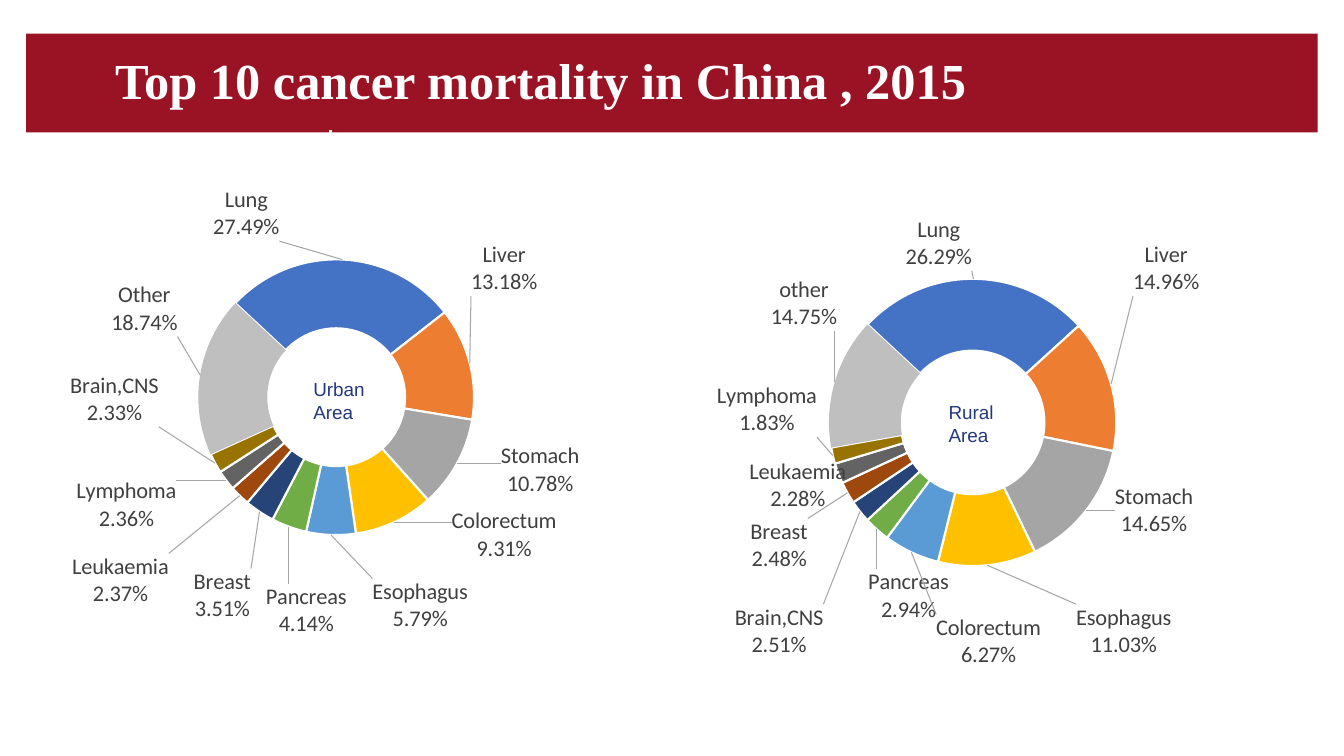
from dataclasses import dataclass
from itertools import accumulate
from math import cos, radians, sin

from lxml.etree import SubElement
from pptx import Presentation
from pptx.chart.data import CategoryChartData
from pptx.dml.color import RGBColor
from pptx.enum.chart import XL_CHART_TYPE
from pptx.enum.shapes import MSO_CONNECTOR, MSO_SHAPE
from pptx.enum.text import MSO_ANCHOR, MSO_AUTO_SIZE, PP_ALIGN
from pptx.oxml import parse_xml
from pptx.oxml.ns import nsdecls, qn
from pptx.util import Inches, Pt


@dataclass(frozen=True)
class Theme:
    """Colours, fonts and type sizes of the slide."""
    banner: str = "991324"
    white: str = "FFFFFF"
    area: str = "23387D"
    label: str = "404040"
    leader: str = "A6A6A6"
    slices: tuple = ("4472C4", "ED7D31", "A5A5A5", "FFC000", "5B9BD5", "70AD47",
                     "264478", "9E480E", "636363", "997300", "BFBFBF")
    title_font: str = "Times New Roman"
    area_font: str = "Arial"
    chart_font: str = "Calibri"
    title_size: float = 36
    area_size: float = 13.5
    label_size: float = 16
    chart_size: float = 10


def format_font(font, name, size, color, bold=False):
    """Set the face, size, colour and weight of a font."""
    font.name, font.size, font.bold = name, Pt(size), bold
    font.color.rgb = RGBColor.from_string(color)


def write_text(shape, text, anchor=MSO_ANCHOR.TOP, wrap=True, **font_format):
    """Fill a shape with left-aligned text, one paragraph a line."""
    frame = shape.text_frame
    frame.text = text
    frame.word_wrap, frame.vertical_anchor = wrap, anchor
    frame.auto_size = MSO_AUTO_SIZE.NONE
    for paragraph in frame.paragraphs:
        paragraph.alignment = PP_ALIGN.LEFT
        format_font(paragraph.font, **font_format)


def manual_layout(**values):
    """Return a chart layout element with the given settings."""
    settings = "".join(f'<c:{key} val="{value}"/>' for key, value in values.items())
    return parse_xml(f'<c:layout {nsdecls("c")}><c:manualLayout>{settings}'
                     '</c:manualLayout></c:layout>')


class SlideBuilder:
    """Draws elements on one slide with a grid of 128 columns and 72 rows."""

    def __init__(self, presentation, theme):
        """Add a title-only slide."""
        self.theme = theme
        self.column = presentation.slide_width / 128
        self.row = presentation.slide_height / 72
        self.slide = presentation.slides.add_slide(presentation.slide_layouts[5])

    def cells(self, left, top, width, height):
        """Turn grid cells into slide lengths."""
        return (round(left * self.column), round(top * self.row),
                round(width * self.column), round(height * self.row))

    def banner(self, *area):
        """Draw the title band."""
        shape = self.slide.shapes.add_shape(MSO_SHAPE.RECTANGLE, *self.cells(*area))
        shape.shadow.inherit = False
        shape.fill.solid()
        shape.fill.fore_color.rgb = RGBColor.from_string(self.theme.banner)
        shape.line.fill.background()

    def title(self, text, *area):
        """Place the title placeholder in front of the band."""
        title = self.slide.shapes.title
        title.left, title.top, title.width, title.height = self.cells(*area)
        write_text(title, text, anchor=MSO_ANCHOR.MIDDLE, name=self.theme.title_font,
                   size=self.theme.title_size, color=self.theme.white, bold=True)
        title.element.getparent().append(title.element)

    def tick(self, *ends):
        """Draw a white hairline."""
        line = self.slide.shapes.add_connector(MSO_CONNECTOR.STRAIGHT, *self.cells(*ends))
        line.line.color.rgb = RGBColor.from_string(self.theme.white)
        line.line.width = Pt(0)
        SubElement(line.element.spPr, qn("a:effectLst"))

    def area_label(self, text, *area, wrap=True):
        """Write the name in the hole of a ring."""
        box = self.slide.shapes.add_textbox(*self.cells(*area))
        write_text(box, text, wrap=wrap, name=self.theme.area_font,
                   size=self.theme.area_size, color=self.theme.area)

    def doughnut(self, slices, plot, *area):
        """Draw a ring whose labels are centred on shares of the chart."""
        names, values, spots = zip(*slices)
        data = CategoryChartData()
        data.categories = names
        data.add_series("Series 1", values)
        chart = self.slide.shapes.add_chart(
            XL_CHART_TYPE.DOUGHNUT, *self.cells(*area), data).chart
        chart.has_legend = chart.has_title = False
        format_font(chart.font, self.theme.chart_font, self.theme.chart_size, "000000")
        ring = chart.plots[0]
        ring.vary_by_categories = True
        self.place_ring(chart.element.find(".//" + qn("c:plotArea")), plot)
        series = ring.series[0]
        for index, color in enumerate(self.theme.slices):
            style = series.points[index].format
            style.fill.solid()
            style.fill.fore_color.rgb = RGBColor.from_string(color)
            if index < len(values) - 1:
                style.line.color.rgb = RGBColor.from_string(self.theme.white)
                style.line.width = Pt(1.5)
            else:
                style.line.fill.background()
        self.slice_labels(series.data_labels, values, spots, plot)

    def place_ring(self, plot_area, plot):
        """Set the place, first angle and hole of a ring."""
        for layout in plot_area.findall(qn("c:layout")):
            plot_area.remove(layout)
        left, top, width, height = plot
        plot_area.insert(0, manual_layout(layoutTarget="inner", xMode="edge", yMode="edge",
                                          x=left, y=top, w=width, h=height))
        plot_area.find(".//" + qn("c:firstSliceAng")).set("val", str(FIRST_ANGLE))
        plot_area.find(".//" + qn("c:holeSize")).set("val", "50")

    def slice_labels(self, labels, values, spots, plot):
        """Move each label from the middle of its slice to its spot."""
        format_font(labels.font, self.theme.chart_font, self.theme.label_size, self.theme.label)
        labels.number_format, labels.number_format_is_linked = "0.00%", False
        labels.show_value = False
        labels.show_category_name = labels.show_percentage = True
        element = labels._element
        separator = f'<c:separator {nsdecls("c")}>\n</c:separator>'
        element.find(qn("c:showLeaderLines")).addprevious(parse_xml(separator))
        element.append(parse_xml(
            f'<c:leaderLines {nsdecls("c", "a")}><c:spPr><a:ln w="9525"><a:solidFill>'
            f'<a:srgbClr val="{self.theme.leader}"/></a:solidFill></a:ln></c:spPr>'
            '</c:leaderLines>'))
        left, top, width, height = plot
        for index, (value, end, (x, y)) in enumerate(zip(values, accumulate(values), spots)):
            angle = radians(FIRST_ANGLE + 360 * (end - value / 2) / sum(values))
            middle_x = left + width * (0.5 + 0.375 * sin(angle))
            middle_y = top + height * (0.5 - 0.375 * cos(angle))
            label = parse_xml(f'<c:dLbl {nsdecls("c")}><c:idx val="{index}"/></c:dLbl>')
            label.append(manual_layout(x=round(x - middle_x, 4), y=round(y - middle_y, 4)))
            for part in ("LegendKey", "Val", "CatName", "SerName", "Percent", "BubbleSize"):
                shown = "1" if part in ("CatName", "Percent") else "0"
                SubElement(label, qn("c:show" + part)).set("val", shown)
            label.append(parse_xml(separator))
            element.insert(index, label)


FIRST_ANGLE = 313
URBAN = (
    ("Lung", 27.49, (0.36, 0.14)), ("Liver", 13.18, (0.79, 0.25)),
    ("Stomach", 10.78, (0.85, 0.65)), ("Colorectum", 9.31, (0.79, 0.78)),
    ("Esophagus", 5.79, (0.65, 0.92)), ("Pancreas", 4.14, (0.46, 0.93)),
    ("Breast", 3.51, (0.32, 0.9)), ("Leukaemia", 2.37, (0.15, 0.87)),
    ("Lymphoma", 2.36, (0.16, 0.72)), ("Brain,CNS", 2.33, (0.14, 0.51)),
    ("Other", 18.74, (0.19, 0.33)))
RURAL = (
    ("Lung", 26.29, (0.5, 0.15)), ("Liver", 14.96, (0.87, 0.2)),
    ("Stomach", 14.65, (0.85, 0.68)), ("Esophagus", 11.03, (0.8, 0.92)),
    ("Colorectum", 6.27, (0.58, 0.94)), ("Pancreas", 2.94, (0.45, 0.85)),
    ("Brain,CNS", 2.51, (0.24, 0.92)), ("Breast", 2.48, (0.24, 0.75)),
    ("Leukaemia", 2.28, (0.27, 0.63)), ("Lymphoma", 1.83, (0.22, 0.48)),
    ("other", 14.75, (0.28, 0.27)))


def main():
    """Build the slide and save it."""
    presentation = Presentation()
    presentation.slide_width, presentation.slide_height = Inches(13.33), Inches(7.5)
    builder = SlideBuilder(presentation, Theme())
    builder.banner(2.5, 3.2, 123, 9.4)
    builder.tick(31.5, 12.4, 31.5, 13.4)
    builder.title("Top 10 cancer mortality in China , 2015", 10, 4.8, 97.2, 5.6)
    builder.doughnut(URBAN, (0.28, 0.23, 0.46, 0.55), 2.9, 13.6, 57.1, 48)
    builder.doughnut(RURAL, (0.32, 0.22, 0.47, 0.57), 60, 16, 58.8, 48)
    builder.area_label("Urban\nArea", 28.9, 35.5, 7.3, 5.4)
    builder.area_label("Rural\nArea", 89.4, 37.7, 6.2, 5.4, wrap=False)
    presentation.save("out.pptx")


if __name__ == "__main__":
    main()
